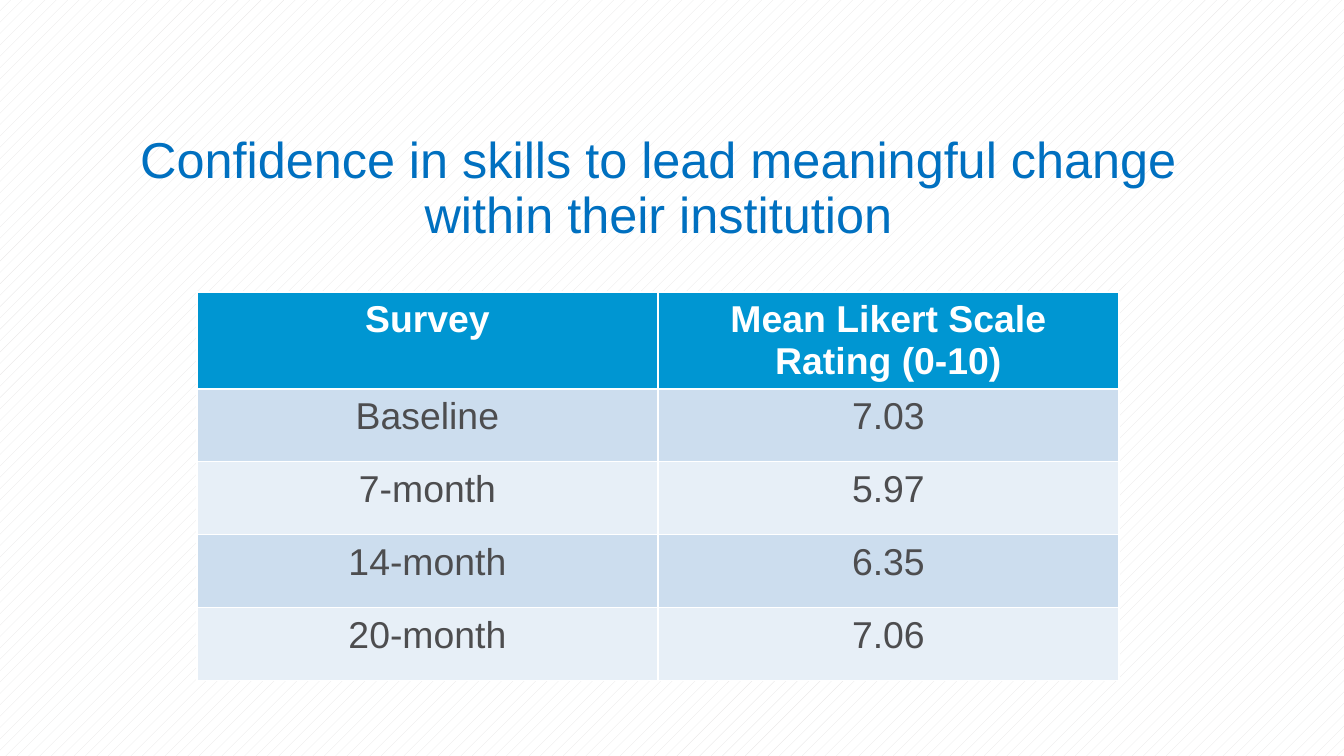
import pptx
import pptx.dml.color
import pptx.enum.dml
import pptx.enum.shapes
import pptx.enum.text
import pptx.util

RGB = pptx.dml.color.RGBColor
WHITE = RGB(0xFF, 0xFF, 0xFF)
HATCH_GRAY = RGB(0xE7, 0xE6, 0xE6)
TITLE_BLUE = RGB(0x00, 0x70, 0xC0)
HEADER_BLUE = RGB(0x00, 0x96, 0xD2)
BAND_DARK = RGB(0xCC, 0xDD, 0xEE)
BAND_LIGHT = RGB(0xE7, 0xEF, 0xF7)
TEXT_GRAY = RGB(0x4D, 0x4D, 0x4F)

PX_PER_INCH = 134.4
SLIDE_W, SLIDE_H = 1344, 756
HEADER_H = 96

TITLE = "Confidence in skills to lead meaningful change within their institution"
RATINGS = [
    ("Survey", "Mean Likert Scale Rating (0-10)"),
    ("Baseline", "7.03"),
    ("7-month", "5.97"),
    ("14-month", "6.35"),
    ("20-month", "7.06"),
]


def px(n):
    return pptx.util.Inches(n / PX_PER_INCH)


def write_text(tf, text, *, size, color, bold=False, line_spacing=None):
    p = tf.paragraphs[0]
    p.alignment = pptx.enum.text.PP_ALIGN.CENTER
    p.line_spacing = line_spacing
    r = p.add_run()
    r.text = text
    r.font.name = "Arial"
    r.font.size = pptx.util.Pt(size)
    r.font.bold = bold
    r.font.color.rgb = color


def add_backdrop(slide, box):
    sp = slide.shapes.add_shape(
        pptx.enum.shapes.MSO_SHAPE.RECTANGLE, *map(px, box))
    sp.shadow.inherit = False
    sp.line.fill.background()
    sp.fill.patterned()
    sp.fill.pattern = pptx.enum.dml.MSO_PATTERN.PERCENT_20
    sp.fill.fore_color.rgb = HATCH_GRAY
    sp.fill.back_color.rgb = WHITE
    # Behind the title placeholder
    slide.shapes.element.insert(2, sp.element)


def place_title(slide, box):
    sp = slide.shapes.title
    sp.left, sp.top, sp.width, sp.height = map(px, box)
    tf = sp.text_frame
    tf.word_wrap = True
    tf.auto_size = pptx.enum.text.MSO_AUTO_SIZE.NONE
    tf.vertical_anchor = pptx.enum.text.MSO_ANCHOR.BOTTOM
    tf.margin_bottom = px(25)
    write_text(tf, TITLE, size=27, color=TITLE_BLUE, line_spacing=0.9)


def add_ratings_table(slide, box):
    rows, cols = len(RATINGS), len(RATINGS[0])
    table = slide.shapes.add_table(rows, cols, *map(px, box)).table
    body_h = (box[3] - HEADER_H) // (rows - 1)
    for col in table.columns:
        col.width = px(box[2] // cols)
    for i, values in enumerate(RATINGS):
        header = i == 0
        table.rows[i].height = px(HEADER_H if header else body_h)
        band = BAND_DARK if i % 2 else BAND_LIGHT
        for cell, text in zip(table.rows[i].cells, values):
            cell.fill.solid()
            cell.fill.fore_color.rgb = HEADER_BLUE if header else band
            write_text(cell.text_frame, text, size=20, bold=header,
                       color=WHITE if header else TEXT_GRAY)


def main():
    prs = pptx.Presentation()
    prs.slide_width, prs.slide_height = px(SLIDE_W), px(SLIDE_H)
    slide = prs.slides.add_slide(prs.slide_layouts[5])
    add_backdrop(slide, (0, 0, SLIDE_W, SLIDE_H))
    place_title(slide, (66, 171, 1185, 98))
    add_ratings_table(slide, (197, 292, 922, 388))
    prs.save("out.pptx")


if __name__ == "__main__":
    main()
